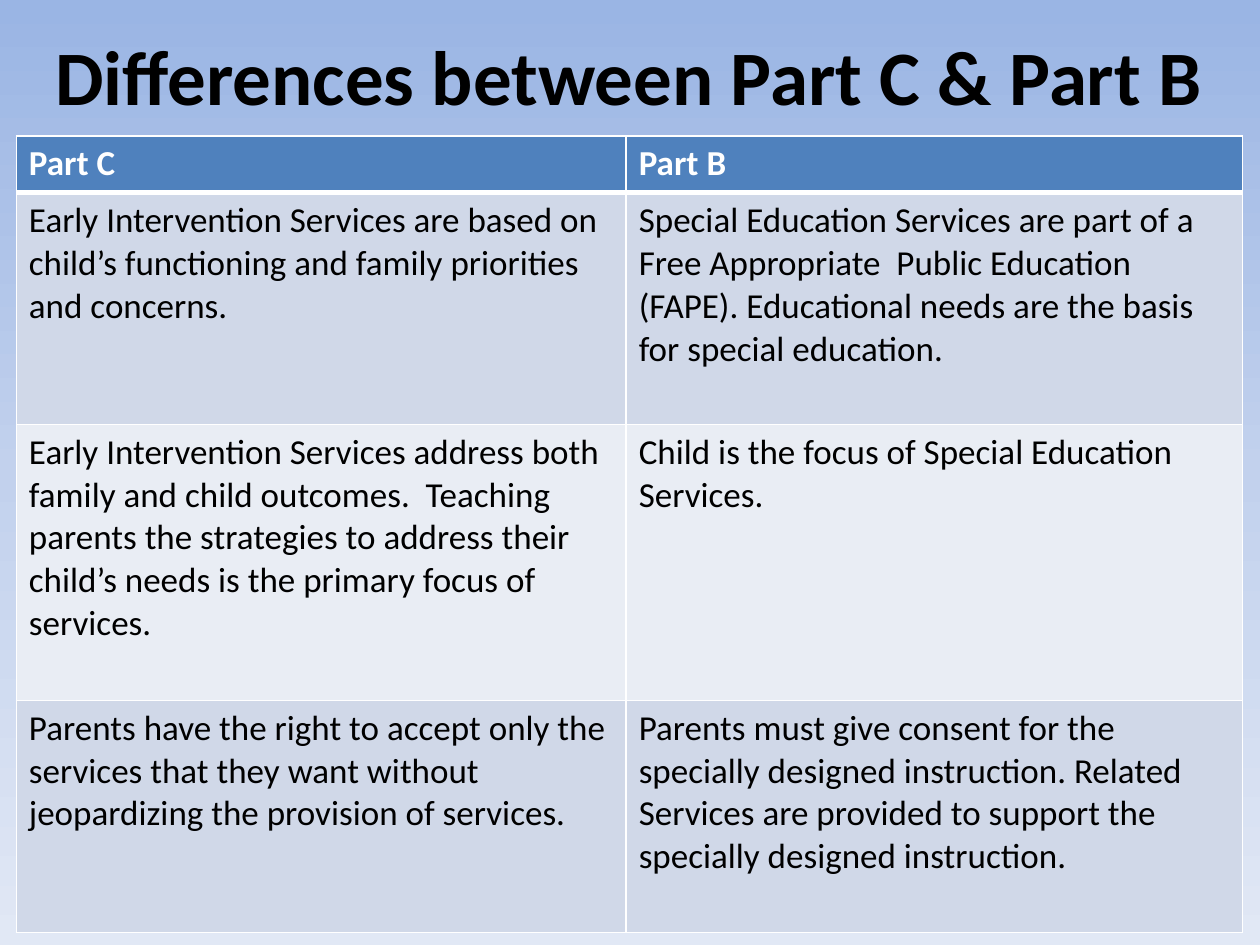
"""Build a slide comparing Part C and Part B services in a two-column table."""
from copy import deepcopy

from lxml import etree
from pptx import Presentation
from pptx.dml import color
from pptx.enum import text
from pptx.oxml import ns
from pptx.util import Pt


def rgb(value):
    return color.RGBColor.from_string(value)


def add_borders(cell, widths):
    properties = cell._tc.get_or_add_tcPr()
    for index, (side, width) in enumerate(widths.items()):
        line = etree.Element(ns.qn(f"a:ln{side}"), w=str(Pt(width)))
        fill = etree.SubElement(line, ns.qn("a:solidFill"))
        etree.SubElement(fill, ns.qn("a:srgbClr"), val="FFFFFF")
        properties.insert(index, line)


deck = Presentation()
deck.slide_width, deck.slide_height = Pt(720), Pt(540)
page = deck.slides.add_slide(deck.slide_layouts[5])

backdrop = page.background.fill
backdrop.gradient()
backdrop.gradient_angle = 270
stop_list = page.element.xpath(".//a:gsLst")[0]
stop_list.insert(1, deepcopy(stop_list[0]))
gradient = [(0, "9AB5E4"), (0.5, "C2D1ED"), (1, "E1E8F5")]
for stop, (position, shade) in zip(backdrop.gradient_stops, gradient):
    stop.position = position
    stop.color.rgb = rgb(shade)

left, width = Pt(9.36), Pt(700.56)
title = page.shapes.title
title.left, title.top, title.width, title.height = left, Pt(7.92), width, Pt(69.84)
title.text_frame.text = "Differences between Part C & Part B"
title.text_frame.vertical_anchor = text.MSO_ANCHOR.MIDDLE
para = title.text_frame.paragraphs[0]
para.alignment = text.PP_ALIGN.CENTER
font = para.runs[0].font
font.name, font.size, font.bold = "Calibri", Pt(44), True
font.color.rgb = rgb("000000")

rows = [
    ("Part C", "Part B"),
    ("Early Intervention Services are based on child’s functioning and family "
     "priorities and concerns.",
     "Special Education Services are part of a Free Appropriate  Public Education "
     "(FAPE). Educational needs are the basis for special education."),
    ("Early Intervention Services address both family and child outcomes.  Teaching "
     "parents the strategies to address their child’s needs is the primary focus of "
     "services.",
     "Child is the focus of Special Education Services."),
    ("Parents have the right to accept only the services that they want without "
     "jeopardizing the provision of services.",
     "Parents must give consent for the specially designed instruction. Related "
     "Services are provided to support the specially designed instruction."),
]
row_heights = [32.4, 132.48, 157.68, 132.48]
column_widths = [348.48, 352.08]
bands = ["E9EDF4", "D0D8E8"]

table = page.shapes.add_table(
    len(rows), len(column_widths), left, Pt(77.76), width, Pt(sum(row_heights))
).table
for column, column_width in zip(table.columns, column_widths):
    column.width = Pt(column_width)

for number, (row, height, wording) in enumerate(zip(table.rows, row_heights, rows)):
    row.height = Pt(height)
    header = number == 0
    for cell, words in zip(row.cells, wording):
        cell.text = words
        cell.fill.solid()
        cell.fill.fore_color.rgb = rgb("4F81BD" if header else bands[number % 2])
        font = cell.text_frame.paragraphs[0].runs[0].font
        font.name, font.size, font.bold = "Calibri", Pt(20), header
        font.color.rgb = rgb("FFFFFF" if header else "000000")
        add_borders(cell, {"L": 1, "R": 1, "T": 3 if number == 1 else 1,
                           "B": 3 if header else 1})

deck.save("out.pptx")
